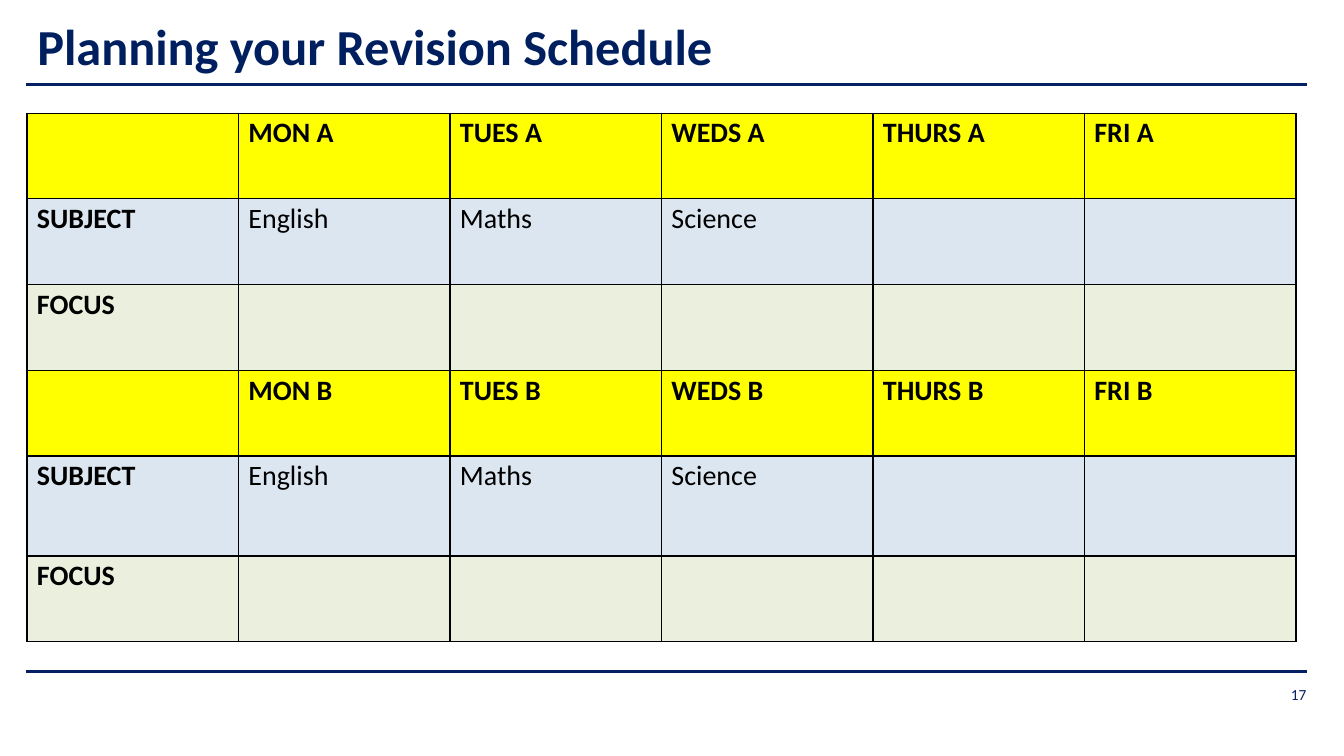
from dataclasses import dataclass

from lxml.etree import SubElement
from pptx import Presentation
from pptx.dml.color import RGBColor
from pptx.enum.shapes import MSO_CONNECTOR
from pptx.enum.text import MSO_ANCHOR, MSO_AUTO_SIZE, PP_ALIGN
from pptx.oxml import parse_xml
from pptx.oxml.ns import nsdecls, qn
from pptx.util import Cm, Pt


@dataclass(frozen=True)
class Theme:
    font: str = "Calibri"
    title: str = "001F5F"
    rule: str = "042163"
    text: str = "000000"
    days: str = "FFFF00"
    subject: str = "DCE6F1"
    focus: str = "EBF0DE"
    title_size: int = 36
    table_size: int = 20
    number_size: int = 11


THEME = Theme()
DAYS = ["MON", "TUES", "WEDS", "THURS", "FRI"]
WEEKS = ["A", "B"]
SUBJECTS = ["English", "Maths", "Science", "", ""]
ROW_HEIGHT = 2.16
TALL_ROW = 4
TALL_HEIGHT = 2.52
COLUMN_WIDTH = 5.33


def set_font(paragraph, size, color, bold=False):
    paragraph.font.name = THEME.font
    paragraph.font.size = Pt(size)
    paragraph.font.bold = bold
    paragraph.font.color.rgb = RGBColor.from_string(color)


def fit_frame(frame, top_margin=0):
    frame.margin_left = frame.margin_right = frame.margin_bottom = 0
    frame.margin_top = Cm(top_margin)
    frame.vertical_anchor = MSO_ANCHOR.TOP
    frame.word_wrap = True
    frame.auto_size = MSO_AUTO_SIZE.SHAPE_TO_FIT_TEXT


def add_title(page, text):
    title = page.shapes.title
    title.left, title.top, title.width, title.height = Cm(0.94), Cm(0.36), Cm(17.1), Cm(1.6)
    fit_frame(title.text_frame, 0.03)
    para = title.text_frame.paragraphs[0]
    para.text = text
    para.alignment = PP_ALIGN.LEFT
    set_font(para, THEME.title_size, THEME.title, True)


def add_rule(page, top, width):
    rule = page.shapes.add_connector(
        MSO_CONNECTOR.STRAIGHT, Cm(0.66), Cm(top), Cm(32.94), Cm(top))
    rule.line.color.rgb = RGBColor.from_string(THEME.rule)
    rule.line.width = Pt(width)
    SubElement(rule.element.spPr, qn("a:effectLst"))


def add_borders(cell):
    properties = cell._tc.get_or_add_tcPr()
    for index, side in enumerate(["lnL", "lnR", "lnT", "lnB"]):
        properties.insert(index, parse_xml(
            f'<a:{side} {nsdecls("a")} w="{Pt(1)}"><a:solidFill>'
            f'<a:srgbClr val="{THEME.text}"/></a:solidFill></a:{side}>'))


def fill_cell(cell, text, fill, bold):
    cell.fill.solid()
    cell.fill.fore_color.rgb = RGBColor.from_string(fill)
    cell.margin_left = Cm(0.25)
    cell.margin_right = cell.margin_bottom = 0
    cell.margin_top = Cm(0.08)
    para = cell.text_frame.paragraphs[0]
    para.text = text
    set_font(para, THEME.table_size, THEME.text, bold)
    add_borders(cell)


def schedule_rows():
    rows = []
    for week in WEEKS:
        rows += [
            (THEME.days, [""] + [f"{day} {week}" for day in DAYS]),
            (THEME.subject, ["SUBJECT"] + SUBJECTS),
            (THEME.focus, ["FOCUS"] + [""] * len(DAYS)),
        ]
    return rows


def add_schedule(page):
    rows = schedule_rows()
    columns = len(DAYS) + 1
    table = page.shapes.add_table(
        len(rows), columns, Cm(0.68), Cm(2.85),
        Cm(COLUMN_WIDTH * columns), Cm(ROW_HEIGHT * len(rows))).table
    table.first_row = table.horz_banding = False
    for column in table.columns:
        column.width = Cm(COLUMN_WIDTH)
    for row_index, (fill, texts) in enumerate(rows):
        table.rows[row_index].height = Cm(TALL_HEIGHT if row_index == TALL_ROW else ROW_HEIGHT)
        for column_index, text in enumerate(texts):
            bold = column_index == 0 or fill == THEME.days
            fill_cell(table.cell(row_index, column_index), text, fill, bold)


def add_page_number(page, number):
    box = page.shapes.add_textbox(Cm(32.43), Cm(17.32), Cm(0.51), Cm(0.46))
    fit_frame(box.text_frame)
    box.text_frame.margin_left = Cm(0.1)
    para = box.text_frame.paragraphs[0]
    para.text = number
    para.line_spacing = Pt(11.5)
    set_font(para, THEME.number_size, THEME.rule)


def main():
    deck = Presentation()
    deck.slide_width, deck.slide_height = Cm(33.87), Cm(19.05)
    page = deck.slides.add_slide(deck.slide_layouts[5])
    add_rule(page, 2.13, 1.5)
    add_rule(page, 16.92, 1.75)
    add_title(page, "Planning your Revision Schedule")
    add_schedule(page)
    add_page_number(page, "17")
    deck.save("out.pptx")


if __name__ == "__main__":
    main()
